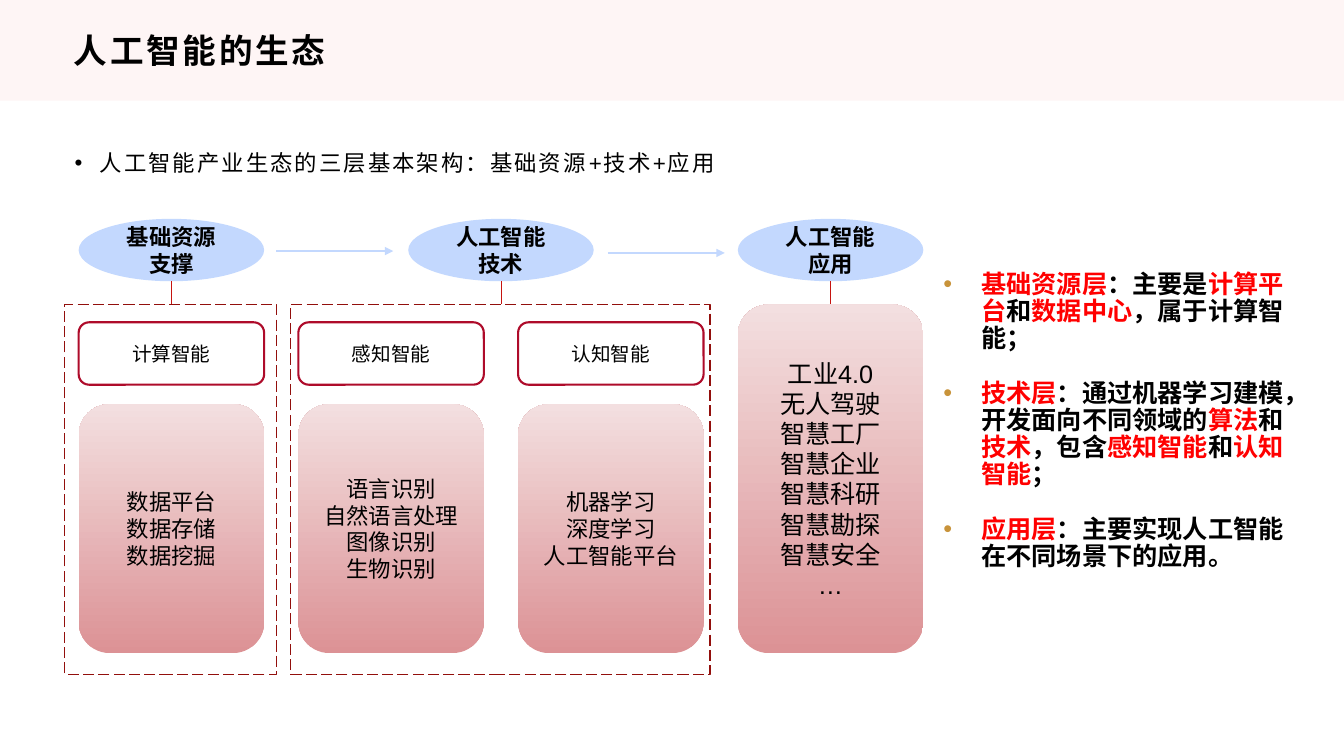
"""Build a slide on the three-layer ecosystem of artificial intelligence."""
import pptx
import pptx.util
import pptx.dml.color
import pptx.enum.dml
import pptx.enum.shapes
import pptx.enum.text
import pptx.oxml
import pptx.oxml.ns
import lxml.etree

Pt = pptx.util.Pt
RGBColor = pptx.dml.color.RGBColor
SHAPE = pptx.enum.shapes.MSO_SHAPE
ALIGN = pptx.enum.text.PP_ALIGN
ANCHOR = pptx.enum.text.MSO_ANCHOR
qn = pptx.oxml.ns.qn

BLACK = RGBColor(0x00, 0x00, 0x00)
RED = RGBColor(0xFF, 0x00, 0x00)
BAND = RGBColor(0xFE, 0xF5, 0xF5)
BLUE = RGBColor(0xC3, 0xD8, 0xFE)
ROSE = RGBColor(0xDC, 0x92, 0x95)
PALE = RGBColor(0xF3, 0xDF, 0xE0)
CRIMSON = RGBColor(0xAE, 0x0B, 0x2A)
MAROON = RGBColor(0x92, 0x0F, 0x0C)
STEM = RGBColor(0xC6, 0x14, 0x10)
GOLD = RGBColor(0xC8, 0x93, 0x3A)

LEFT, PITCH, WIDTH = 56.2, 156.95, 132.5
OVAL_TOP, OVAL_HEIGHT, FRAME_TOP = 156.3, 44.6, 217.5


def write(sp, text, size=16, bold=False, align=ALIGN.CENTER, anchor=ANCHOR.MIDDLE,
          spacing=0, line=1.0, before=0, after=0, indent=0, bullet=None):
    """Write one paragraph per line; parts between bars are red."""
    tf = sp.text_frame
    tf.word_wrap = True
    tf.auto_size = pptx.enum.text.MSO_AUTO_SIZE.NONE
    tf.vertical_anchor = anchor
    for i, row in enumerate(text.split("\n")):
        p = tf.add_paragraph() if i else tf.paragraphs[0]
        if bullet is not None:
            pPr = p._p.get_or_add_pPr()
            pPr.set("marL", str(Pt(indent)))
            pPr.set("indent", str(-Pt(indent)))
            clr = lxml.etree.SubElement(pPr, qn("a:buClr"))
            lxml.etree.SubElement(clr, qn("a:srgbClr"), val=str(bullet))
            lxml.etree.SubElement(pPr, qn("a:buFont"), typeface="Arial")
            lxml.etree.SubElement(pPr, qn("a:buChar"), char="•")
        p.alignment = align
        p.line_spacing = line
        p.space_before = Pt(before if i else 0)
        p.space_after = Pt(after)
        for j, part in enumerate(row.split("|")):
            if part:
                r = p.add_run()
                r.text = part
                r.font.name = "Arial"
                r.font.size = Pt(size)
                r.font.bold = bold
                r.font.color.rgb = RED if j % 2 else BLACK
                if spacing:
                    r._r.get_or_add_rPr().set("spc", str(int(spacing * 100)))


def place(sp, left, top, width, height):
    sp.left, sp.top, sp.width, sp.height = Pt(left), Pt(top), Pt(width), Pt(height)


prs = pptx.Presentation()
prs.slide_width, prs.slide_height = Pt(960), Pt(540)
s = prs.slides.add_slide(prs.slide_layouts[3])
title, intro, layers = s.placeholders

band = s.shapes.add_shape(SHAPE.RECTANGLE, Pt(0), Pt(0), Pt(960), Pt(72))
band.shadow.inherit = False
band.fill.solid()
band.fill.fore_color.rgb = BAND
band.line.fill.background()
title._element.addprevious(band._element)

place(title, 45.4, 18.7, 869, 34.6)
write(title, "人工智能的生态", size=24, bold=True, align=ALIGN.LEFT, spacing=2)

place(intro, 46.1, 97.2, 867.6, 33.1)
write(intro, "人工智能产业生态的三层基本架构：基础资源+技术+应用", align=ALIGN.LEFT,
      anchor=ANCHOR.TOP, spacing=1.5, line=1.3, after=10, indent=18, bullet=BLACK)

place(layers, 668.9, 177.1, 264.2, 266.4)
layers.text_frame.margin_left = layers.text_frame.margin_right = Pt(5)
layers.text_frame.margin_top = Pt(17)
write(layers, "|基础资源层|：主要是|计算平台|和|数据中心|，属于计算智能；\n"
      "|技术层|：通过机器学习建模，开发面向不同领域的|算法|和|技术|，包含|感知智能|和|认知智能|；\n"
      "|应用层|：主要实现人工智能在不同场景下的应用。",
      size=18, bold=True, align=ALIGN.LEFT, anchor=ANCHOR.TOP, line=0.9,
      before=19.3, indent=27, bullet=GOLD)

panels = [
    (288.7, 177.8, 16, "数据平台\n数据存储\n数据挖掘"),
    (288.7, 177.8, 16, "语言识别\n自然语言处理\n图像识别\n生物识别"),
    (288.7, 177.8, 16, "机器学习\n深度学习\n人工智能平台"),
    (FRAME_TOP, 249, 18, "工业4.0\n无人驾驶\n智慧工厂\n智慧企业\n智慧科研\n智慧勘探\n智慧安全\n…"),
]
for i, (top, height, size, text) in enumerate(panels):
    sp = s.shapes.add_shape(SHAPE.ROUNDED_RECTANGLE, Pt(LEFT + i * PITCH), Pt(top),
                            Pt(WIDTH), Pt(height))
    sp.shadow.inherit = False
    sp.fill.gradient()
    sp.fill.gradient_angle = 90
    for stop, color in zip(sp.fill.gradient_stops, (ROSE, PALE)):
        stop.color.rgb = color
    sp.line.fill.background()
    write(sp, text, size=size)

for i, text in enumerate(["基础资源支撑", "人工智能技术", "人工智能应用"]):
    sp = s.shapes.add_shape(SHAPE.OVAL, Pt(LEFT + i * PITCH * 1.5), Pt(OVAL_TOP),
                            Pt(WIDTH), Pt(OVAL_HEIGHT))
    sp.shadow.inherit = False
    sp.fill.solid()
    sp.fill.fore_color.rgb = BLUE
    sp.line.fill.background()
    write(sp, text, bold=True)

for i, text in enumerate(["计算智能", "感知智能", "认知智能"]):
    sp = s.shapes.add_shape(SHAPE.ROUNDED_RECTANGLE, Pt(LEFT + i * PITCH), Pt(230.2),
                            Pt(WIDTH), Pt(44.6))
    sp.shadow.inherit = False
    sp.fill.background()
    sp.line.color.rgb = CRIMSON
    sp.line.width = Pt(1.5)
    write(sp, text, size=14)

for left, width in [(46.1, 151.4), (207.4, 299.7)]:
    sp = s.shapes.add_shape(SHAPE.RECTANGLE, Pt(left), Pt(FRAME_TOP), Pt(width), Pt(264.2))
    sp.shadow.inherit = False
    sp.fill.background()
    sp.line.color.rgb = MAROON
    sp.line.width = Pt(1)
    sp.line.dash_style = pptx.enum.dml.MSO_LINE.LONG_DASH

centers = [LEFT + WIDTH / 2 + i * PITCH * 1.5 for i in range(3)]
lines = [(x, OVAL_TOP + OVAL_HEIGHT, x, FRAME_TOP, STEM, 0.5, False) for x in centers]
lines += [(x, y, x + 83.5, y, BLUE, 1.5, True) for x, y in [(197.4, 179.3), (434.2, 180.7)]]
for x1, y1, x2, y2, color, width, arrow in lines:
    sp = s.shapes.add_connector(pptx.enum.shapes.MSO_CONNECTOR.STRAIGHT,
                                Pt(x1), Pt(y1), Pt(x2), Pt(y2))
    sp.line.color.rgb = color
    sp.line.width = Pt(width)
    if arrow:
        lxml.etree.SubElement(sp.line._get_or_add_ln(), qn("a:tailEnd"), type="triangle")
    lxml.etree.SubElement(sp._element.spPr, qn("a:effectLst"))

prs.save("out.pptx")
